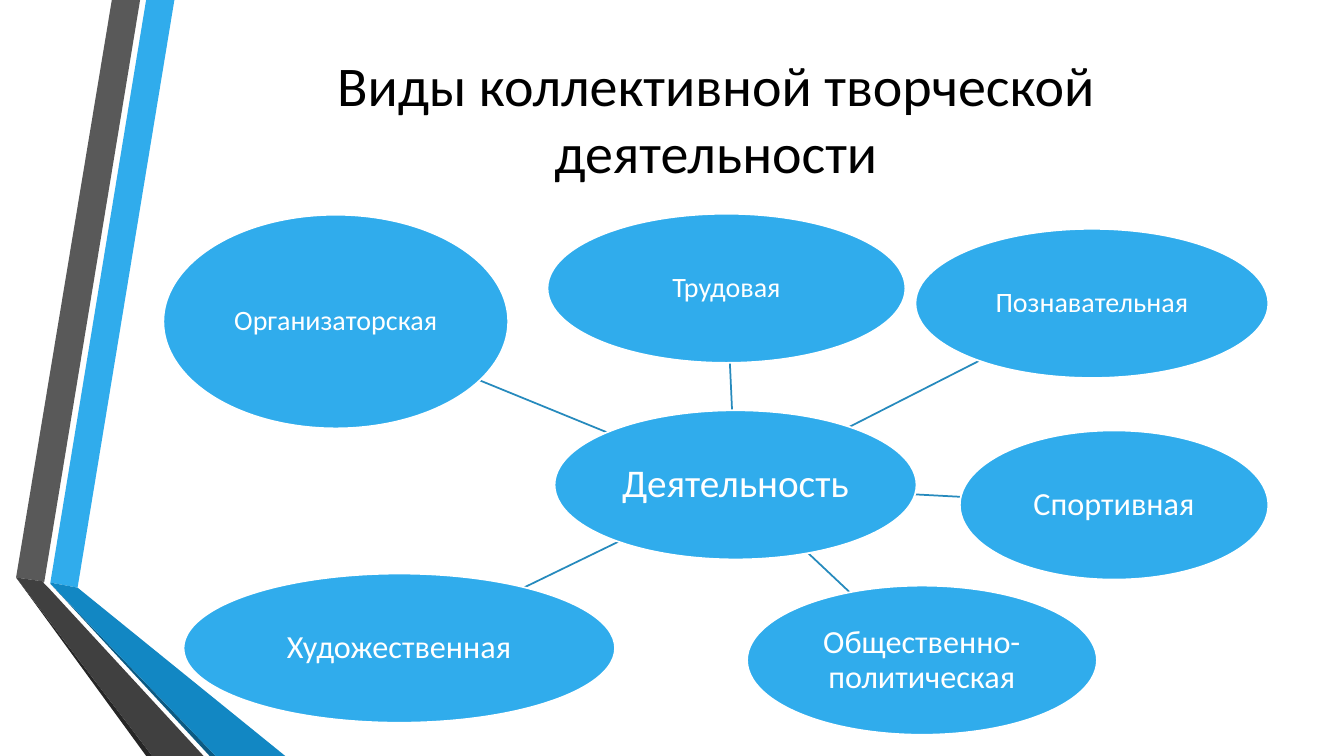
"""Build a slide that maps the kinds of collective creative activity."""
from dataclasses import dataclass
from math import hypot

from lxml import etree
from pptx import Presentation
from pptx.dml.color import RGBColor
from pptx.enum.shapes import MSO_CONNECTOR, MSO_SHAPE
from pptx.enum.text import MSO_ANCHOR, MSO_AUTO_SIZE, PP_ALIGN
from pptx.oxml.ns import qn
from pptx.util import Inches, Pt

OVAL = MSO_SHAPE.OVAL
STRAIGHT = MSO_CONNECTOR.STRAIGHT
MIDDLE = MSO_ANCHOR.MIDDLE
CENTER = PP_ALIGN.CENTER
NO_FIT = MSO_AUTO_SIZE.NONE

TITLE = "Виды коллективной творческой деятельности"
TITLE_BOX = (1.62, 0.21, 10.96, 1.92)

HUB = ("Деятельность", (5.5, 4.07, 3.59, 1.48), "hub")
KINDS = [
    ("Трудовая", (5.43, 2.12, 3.55, 1.48), "small"),
    ("Познавательная", (9.08, 2.27, 3.5, 1.48), "small"),
    ("Спортивная", (9.52, 4.27, 3.06, 1.48), "large"),
    ("Общественно-политическая", (7.41, 5.81, 3.47, 1.48), "large"),
    ("Художественная", (1.82, 5.69, 4.28, 1.48), "large"),
    ("Организаторская", (1.62, 2.13, 3.42, 2.12), "small"),
]

BANDS = [
    ("30ACEC", [(0.5, 5.78), (0.77, 5.83), (1.73, 0), (1.45, 0)]),
    ("595959", [(1.39, 0), (1.11, 0), (0.16, 5.73), (0.44, 5.77)]),
    ("262626", [(0.16, 5.73), (1.45, 7.5), (1.51, 7.5)]),
    ("0C5A82", [(0.5, 5.79), (2.08, 7.5), (2.14, 7.5)]),
    ("1287C3", [(0.5, 5.79), (2.14, 7.5), (2.83, 7.5), (0.77, 5.83), (0.5, 5.78)]),
    ("404040", [(2.02, 7.5), (0.48, 5.83), (0.43, 5.78), (0.44, 5.77),
                (0.16, 5.73), (1.51, 7.5)]),
]


@dataclass(frozen=True)
class Theme:
    """Hold the colours, font and sizes."""
    font: str = "Calibri"
    ink: str = "000000"
    paper: str = "FFFFFF"
    oval: str = "30ACEC"
    link: str = "268ABD"
    title: int = 40
    hub: int = 28
    large: int = 23
    small: int = 20
    line: float = 1.25


THEME = Theme()


def write(shape, text, *, size, color, inset=0.1, lead=1.0):
    """Put centred text into a shape."""
    frame = shape.text_frame
    frame.word_wrap = True
    frame.auto_size = NO_FIT
    frame.vertical_anchor = MIDDLE
    frame.margin_left = frame.margin_right = Inches(inset)
    frame.margin_top = frame.margin_bottom = Inches(min(inset, 0.05))
    para = frame.paragraphs[0]
    para.alignment = CENTER
    para.line_spacing = lead
    run = para.add_run()
    run.text = text
    run.font.name = THEME.font
    run.font.size = Pt(size)
    run.font.color.rgb = RGBColor.from_string(color)


def paint(shape, color):
    """Fill a shape and drop its shadow."""
    shape.shadow.inherit = False
    shape.fill.solid()
    shape.fill.fore_color.rgb = RGBColor.from_string(color)


def stroke(line, color):
    """Set the colour and width of a line."""
    line.color.rgb = RGBColor.from_string(color)
    line.width = Pt(THEME.line)


def add_band(slide, color, points):
    """Draw one closed side band."""
    first, *rest = [(Inches(x), Inches(y)) for x, y in points]
    path = slide.shapes.build_freeform(*first, scale=1.0)
    path.add_line_segments(rest, close=True)
    band = path.convert_to_shape()
    paint(band, color)
    band.line.fill.background()


def middle(box):
    """Return the centre of a box."""
    left, top, width, height = box
    return left + width / 2, top + height / 2


def edge(box, target):
    """Return where the ray from an oval's centre to a target leaves it."""
    x, y = middle(box)
    dx, dy = target[0] - x, target[1] - y
    ratio = 1 / hypot(dx / (box[2] / 2), dy / (box[3] / 2))
    return x + dx * ratio, y + dy * ratio


def add_link(slide, start, end):
    """Join the facing edges of two ovals."""
    ends = edge(start, middle(end)) + edge(end, middle(start))
    link = slide.shapes.add_connector(STRAIGHT, *map(Inches, ends))
    stroke(link.line, THEME.link)
    etree.SubElement(link._element.spPr, qn("a:effectLst"))


def add_oval(slide, text, box, level):
    """Draw a labelled oval."""
    oval = slide.shapes.add_shape(OVAL, *map(Inches, box))
    paint(oval, THEME.oval)
    stroke(oval.line, THEME.paper)
    write(oval, text, size=getattr(THEME, level), color=THEME.paper,
          inset=0.02, lead=0.9)


def main():
    """Build and save the slide."""
    deck = Presentation()
    deck.slide_width, deck.slide_height = Inches(13.33), Inches(7.5)
    slide = deck.slides.add_slide(deck.slide_layouts[5])
    for color, points in BANDS:
        add_band(slide, color, points)
    title = slide.shapes.title
    title.left, title.top, title.width, title.height = map(Inches, TITLE_BOX)
    write(title, TITLE, size=THEME.title, color=THEME.ink)
    for _, box, _ in KINDS:
        add_link(slide, HUB[1], box)
    for item in [HUB, *KINDS]:
        add_oval(slide, *item)
    deck.save("out.pptx")


if __name__ == "__main__":
    main()
